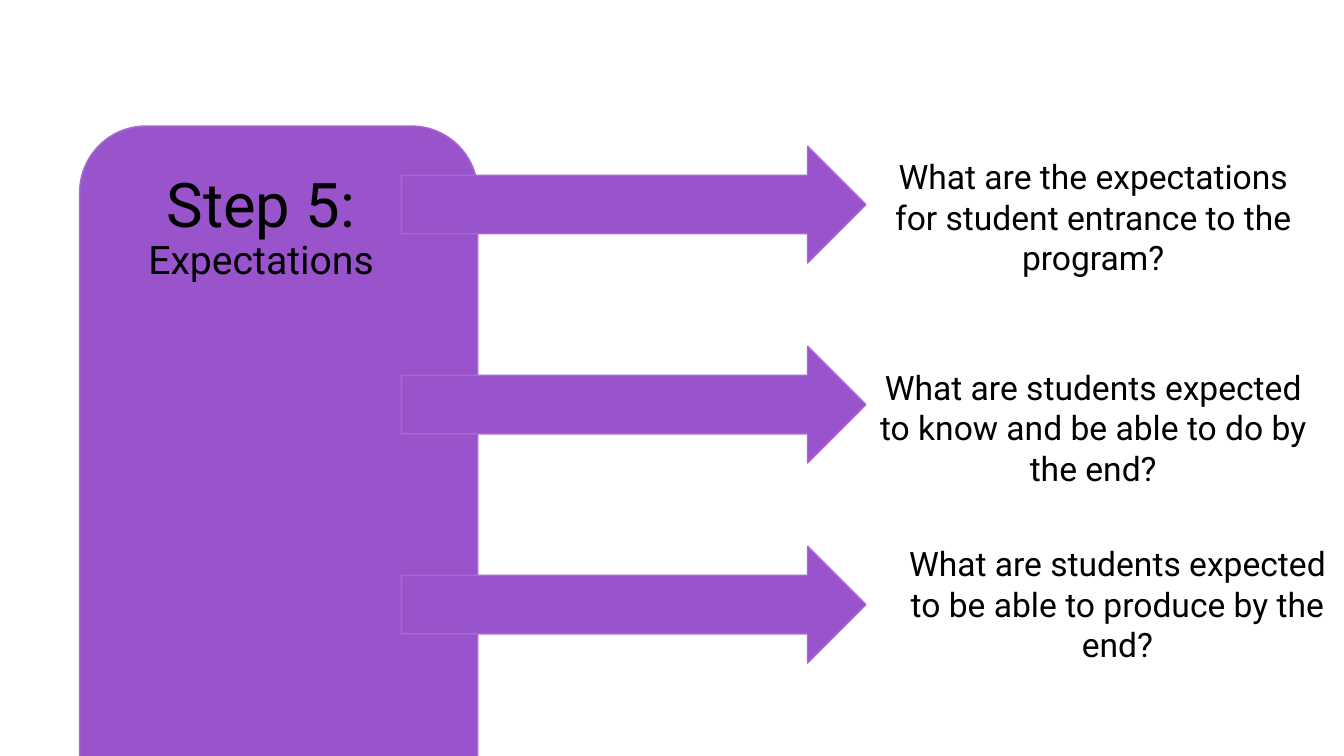
import pptx
import pptx.util
from pptx.dml.color import RGBColor
from pptx.enum.shapes import MSO_SHAPE
from pptx.enum.text import MSO_ANCHOR, MSO_AUTO_SIZE, PP_ALIGN

Pt = pptx.util.Pt

THEME = {
    "purple": RGBColor.from_string("9954CC"),
    "outline": RGBColor.from_string("A66BD3"),
    "text": RGBColor.from_string("000000"),
    "font": "Roboto",
    "step": 44,
    "topic": 28,
    "question": 24,
}

ARROW_TOP, ARROW_STEP = 104.4, 142.9
QUESTIONS = [
    (619.2, 108, "What are the expectations for student entrance to the program?"),
    (619.2, 258.5, "What are students expected to know and be able to do by the end?"),
    (636.5, 384.5, "What are students expected to be able to produce by the end?"),
]


def add_block(s, kind, left, top, width, height):
    """Add a purple preset shape with a thin lighter outline."""
    sp = s.shapes.add_shape(kind, Pt(left), Pt(top), Pt(width), Pt(height))
    sp.shadow.inherit = False
    sp.fill.solid()
    sp.fill.fore_color.rgb = THEME["purple"]
    sp.line.color.rgb = THEME["outline"]
    sp.line.width = Pt(1)


def add_text(s, left, top, width, height, runs, auto_size, line_spacing=None):
    """Add one centred paragraph; runs is a list of (text, size name)."""
    tf = s.shapes.add_textbox(Pt(left), Pt(top), Pt(width), Pt(height)).text_frame
    frame_format = {
        "word_wrap": True,
        "auto_size": auto_size,
        "vertical_anchor": MSO_ANCHOR.TOP,
    }
    for name, value in frame_format.items():
        setattr(tf, name, value)
    p = tf.paragraphs[0]
    p.alignment = PP_ALIGN.CENTER
    p.line_spacing = line_spacing
    for text, size in runs:
        r = p.add_run()
        r.text = text
        for name, value in {"name": THEME["font"], "size": Pt(THEME[size])}.items():
            setattr(r.font, name, value)
        r.font.color.rgb = THEME["text"]


def main():
    prs = pptx.Presentation()
    prs.slide_width, prs.slide_height = Pt(960), Pt(540)
    s = prs.slides.add_slide(prs.slide_layouts[6])

    add_block(s, MSO_SHAPE.ROUNDED_RECTANGLE, 56.9, 90, 284.4, 540.7)
    add_text(s, 74.9, 121, 223.2, 104.4,
             [("Step 5: ", "step"), ("Expectations", "topic")],
             MSO_AUTO_SIZE.NONE, 0.9)
    for i, (left, top, question) in enumerate(QUESTIONS):
        add_block(s, MSO_SHAPE.RIGHT_ARROW, 286.6, ARROW_TOP + i * ARROW_STEP, 332, 83.5)
        add_text(s, left, top, 323.3, 94.3, [(question, "question")],
                 MSO_AUTO_SIZE.SHAPE_TO_FIT_TEXT)

    prs.save("out.pptx")


if __name__ == "__main__":
    main()
